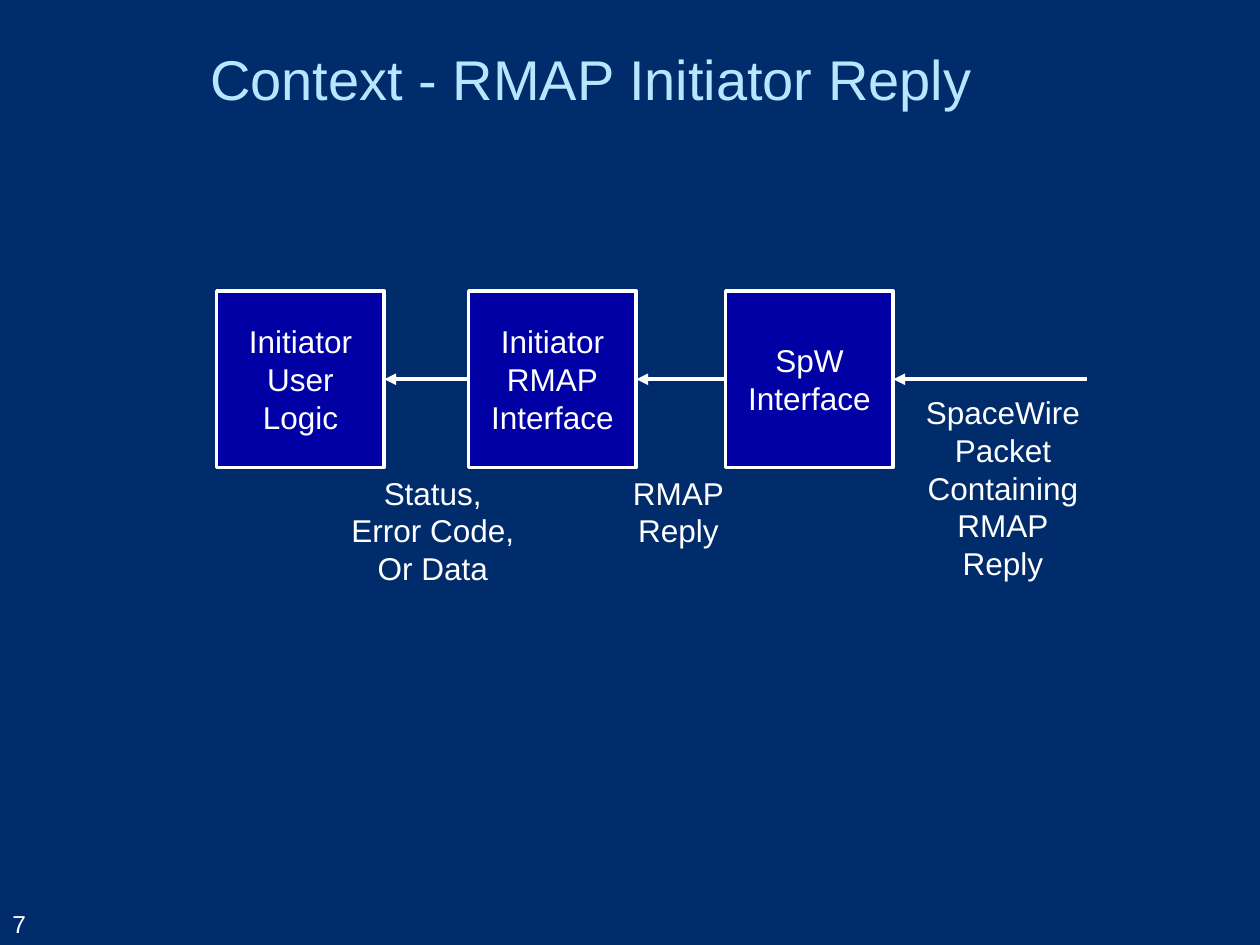
from pptx import Presentation
from pptx.dml.color import RGBColor
from pptx.enum.shapes import MSO_CONNECTOR, MSO_SHAPE
from pptx.enum.text import MSO_ANCHOR, MSO_AUTO_SIZE, PP_ALIGN
from pptx.oxml.ns import qn
from pptx.util import Inches, Pt
from lxml.etree import SubElement

NAVY = RGBColor(0x01, 0x2C, 0x6C)
BLUE = RGBColor(0x00, 0x00, 0xA4)
PALE_BLUE = RGBColor(0xB7, 0xE7, 0xFF)
WHITE = RGBColor(0xFF, 0xFF, 0xFF)

TITLE = "Context - RMAP Initiator Reply"
PAGE_NUMBER = "7"

# Left edge, text
BLOCKS = [
    (1.72, "Initiator\nUser Logic"),
    (3.72, "Initiator\nRMAP\nInterface"),
    (5.76, "SpW\nInterface"),
]
BLOCK_TOP, BLOCK_WIDTH, BLOCK_HEIGHT = 2.31, 1.33, 1.4
MIDDLE = BLOCK_TOP + BLOCK_HEIGHT / 2
INPUT_START = 8.63

# Left, top, width, height, text; one label for each arrow
LABELS = [
    (2.68, 3.71, 1.51, 1.01, "Status,\nError Code,\nOr Data"),
    (4.92, 3.71, 0.93, 0.71, "RMAP\nReply"),
    (7.24, 3.07, 1.44, 1.62, "SpaceWire\nPacket\nContaining\nRMAP\nReply"),
]


def write_text(shape, text, size=18, color=WHITE, align=PP_ALIGN.CENTER,
               anchor=MSO_ANCHOR.MIDDLE, wrap=True):
    frame = shape.text_frame
    frame.text = text
    frame.word_wrap = wrap
    frame.vertical_anchor = anchor
    for paragraph in frame.paragraphs:
        paragraph.alignment = align
        for run in paragraph.runs:
            run.font.name = "Arial"
            run.font.size = Pt(size)
            run.font.color.rgb = color


def add_text(slide, left, top, width, height, text, **style):
    box = slide.shapes.add_textbox(
        Inches(left), Inches(top), Inches(width), Inches(height))
    write_text(box, text, **style)
    return box


def add_block(slide, left, text):
    block = slide.shapes.add_shape(
        MSO_SHAPE.RECTANGLE, Inches(left), Inches(BLOCK_TOP),
        Inches(BLOCK_WIDTH), Inches(BLOCK_HEIGHT))
    block.shadow.inherit = False
    block.fill.solid()
    block.fill.fore_color.rgb = BLUE
    block.line.color.rgb = WHITE
    block.line.width = Pt(2)
    write_text(block, text)
    return block


def add_arrow(slide, target, source=None):
    """Point at the right side of target, from source or from the slide's input."""
    arrow = slide.shapes.add_connector(
        MSO_CONNECTOR.STRAIGHT, target.left + target.width, Inches(MIDDLE),
        Inches(INPUT_START), Inches(MIDDLE))
    arrow.begin_connect(target, 3)
    if source is not None:
        arrow.end_connect(source, 1)
    arrow.line.color.rgb = WHITE
    arrow.line.width = Pt(2.25)
    SubElement(arrow.line._get_or_add_ln(), qn("a:headEnd"), type="triangle")
    SubElement(arrow._element.spPr, qn("a:effectLst"))


def main():
    presentation = Presentation()
    presentation.slide_width = Inches(10)
    presentation.slide_height = Inches(7.5)
    slide = presentation.slides.add_slide(presentation.slide_layouts[6])
    slide.background.fill.solid()
    slide.background.fill.fore_color.rgb = NAVY

    add_text(slide, 1.57, 0.17, 8.43, 0.9, TITLE,
             size=32, color=PALE_BLUE, align=PP_ALIGN.LEFT)
    add_text(slide, 0, 6.98, 1.06, 0.52, PAGE_NUMBER,
             size=14, align=PP_ALIGN.LEFT, anchor=MSO_ANCHOR.BOTTOM)

    blocks = [add_block(slide, left, text) for left, text in BLOCKS]
    for target, source in zip(blocks, blocks[1:] + [None]):
        add_arrow(slide, target, source)
    for label in LABELS:
        box = add_text(slide, *label, anchor=MSO_ANCHOR.TOP, wrap=False)
        box.text_frame.auto_size = MSO_AUTO_SIZE.SHAPE_TO_FIT_TEXT

    presentation.save("out.pptx")


if __name__ == "__main__":
    main()
